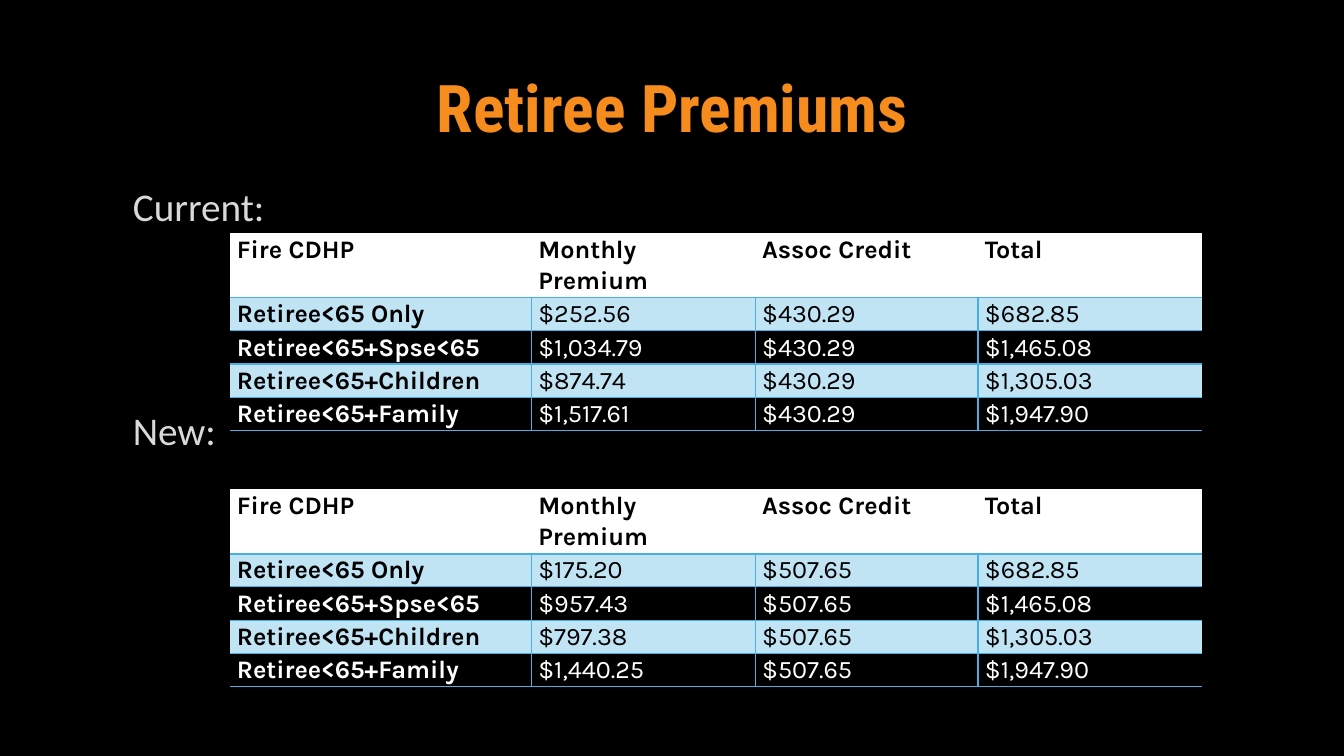
from lxml.etree import SubElement
from pptx import Presentation
from pptx.dml.color import RGBColor
from pptx.enum.text import MSO_ANCHOR, PP_ALIGN
from pptx.oxml.ns import qn
from pptx.util import Inches, Pt

TITLE = "Retiree Premiums"
HEADINGS = ["Fire CDHP", "Monthly Premium", "Assoc Credit", "Total"]
PLANS = ["Retiree<65 Only", "Retiree<65+Spse<65", "Retiree<65+Children", "Retiree<65+Family"]
TOTALS = ["$682.85", "$1,465.08", "$1,305.03", "$1,947.90"]
PERIODS = [
    {"label": "New:", "top": 4.85, "header_height": 0.29, "credit": "$507.65",
     "premiums": ["$175.20", "$957.43", "$797.38", "$1,440.25"]},
    {"label": "Current:", "top": 2.31, "header_height": 0.33, "credit": "$430.29",
     "premiums": ["$252.56", "$1,034.79", "$874.74", "$1,517.61"]},
]

BLACK, WHITE, ORANGE, GREY = "000000", "FFFFFF", "F68C1E", "D9D9D9"
BAND, RULE = "C1E4F5", "45B0E1"
TABLE_LEFT, COLUMN_WIDTHS, ROW_HEIGHT = 2.28, [2.99, 2.22, 2.21, 2.22], 0.33
CELL_FORMAT = {"margin_left": Inches(0.07), "margin_right": Inches(0.07),
               "margin_top": 0, "margin_bottom": 0}


def rgb(color):
    return RGBColor.from_string(color)


def place(shape, left, top, width, height):
    shape.left, shape.top = Inches(left), Inches(top)
    shape.width, shape.height = Inches(width), Inches(height)


def write(paragraph, text, color, line_spacing, **font_format):
    paragraph.line_spacing = line_spacing
    run = paragraph.add_run()
    run.text = text
    run.font.color.rgb = rgb(color)
    for attribute, value in font_format.items():
        setattr(run.font, attribute, value)


def set_borders(cell, widths):
    """Draw the cell's edges; a width of 0 hides that edge."""
    properties = cell._tc.get_or_add_tcPr()
    for edge in ("L", "R", "T", "B"):
        line = SubElement(properties, qn(f"a:ln{edge}"))
        if widths[edge]:
            line.set("w", str(Pt(widths[edge])))
            fill = SubElement(line, qn("a:solidFill"))
            SubElement(fill, qn("a:srgbClr"), val=RULE)
        else:
            SubElement(line, qn("a:noFill"))


def add_premium_table(slide, period):
    rows = [HEADINGS] + [[plan, premium, period["credit"], total]
                         for plan, premium, total in zip(PLANS, period["premiums"], TOTALS)]
    heights = [period["header_height"]] + [ROW_HEIGHT] * len(PLANS)
    table = slide.shapes.add_table(
        len(rows), len(HEADINGS), Inches(TABLE_LEFT), Inches(period["top"]),
        Inches(sum(COLUMN_WIDTHS)), Inches(sum(heights))).table
    table.first_row = table.horz_banding = False
    for column, width in zip(table.columns, COLUMN_WIDTHS):
        column.width = Inches(width)
    last = len(HEADINGS) - 1
    for r, values in enumerate(rows):
        table.rows[r].height = Inches(heights[r])
        header, banded = r == 0, r % 2 == 1
        for c, text in enumerate(values):
            cell = table.cell(r, c)
            for attribute, value in CELL_FORMAT.items():
                setattr(cell, attribute, value)
            set_borders(cell, {
                "L": 0 if header or c == 0 else 1,
                "R": 0 if header or c == last else 1,
                "T": {0: 0, 1: 1.5}.get(r, 1),
                "B": 1.5 if header else 1})
            if header or banded:
                cell.fill.solid()
                cell.fill.fore_color.rgb = rgb(WHITE if header else BAND)
            else:
                cell.fill.background()
            write(cell.text_frame.paragraphs[0], text,
                  BLACK if header or banded else WHITE, 1.07,
                  size=Pt(18), name="Karla", bold=header or c == 0)


def main():
    presentation = Presentation()
    presentation.slide_width, presentation.slide_height = Inches(13.33), Inches(7.5)
    slide = presentation.slides.add_slide(presentation.slide_layouts[5])
    slide.background.fill.solid()
    slide.background.fill.fore_color.rgb = rgb(BLACK)

    title = slide.shapes.title
    place(title, 1.42, 0.4, 10.5, 1.41)
    title.text_frame.vertical_anchor = MSO_ANCHOR.MIDDLE
    heading = title.text_frame.paragraphs[0]
    heading.alignment = PP_ALIGN.CENTER
    write(heading, TITLE, ORANGE, 0.9, size=Pt(47), name="Roboto Condensed", bold=True)

    labels = slide.shapes.add_textbox(0, 0, 0, 0)
    place(labels, 1.22, 1.81, 11.19, 5.56)
    labels.text_frame.word_wrap = True
    new, current = PERIODS
    current_label = labels.text_frame.paragraphs[0]
    new_label = labels.text_frame.add_paragraph()
    new_label.space_before = Pt(130)
    for paragraph, period in ((current_label, current), (new_label, new)):
        write(paragraph, period["label"], GREY, 0.9, size=Pt(28), name="Calibri")

    for period in PERIODS:
        add_premium_table(slide, period)
    presentation.save("out.pptx")


if __name__ == "__main__":
    main()
